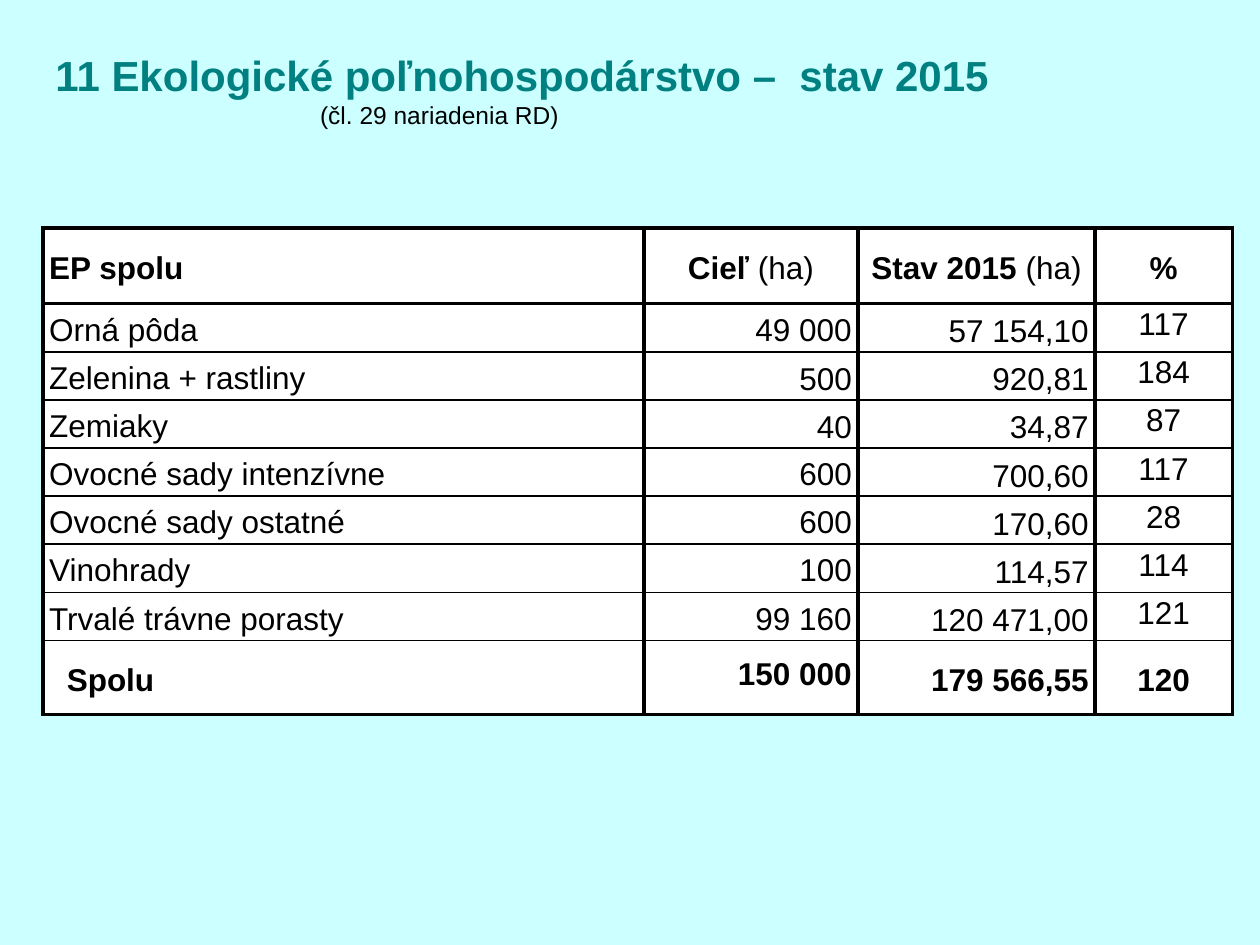
from pptx import Presentation
from pptx.dml.color import RGBColor
from pptx.enum.text import MSO_ANCHOR, PP_ALIGN
from pptx.oxml.ns import qn
from pptx.util import Inches, Pt
from lxml import etree

LEFT, CENTER, RIGHT = PP_ALIGN.LEFT, PP_ALIGN.CENTER, PP_ALIGN.RIGHT
TOP, MIDDLE, BOTTOM = MSO_ANCHOR.TOP, MSO_ANCHOR.MIDDLE, MSO_ANCHOR.BOTTOM

# Content
TITLE = "11 Ekologické poľnohospodárstvo –  stav 2015"
SUBTITLE = "(čl. 29 nariadenia RD)"
HEADER = [("EP spolu", ""), ("Cieľ ", "(ha)"), ("Stav 2015 ", "(ha)"), ("%", "")]
AREAS = [
    ("Orná pôda", "49 000", "57 154,10", "117"),
    ("Zelenina + rastliny", "500", "920,81", "184"),
    ("Zemiaky", "40", "34,87", "87"),
    ("Ovocné sady intenzívne", "600", "700,60", "117"),
    ("Ovocné sady ostatné", "600", "170,60", "28"),
    ("Vinohrady", "100", "114,57", "114"),
    ("Trvalé trávne porasty", "99 160", "120 471,00", "121"),
]
TOTAL = ("Spolu", "150 000", "179 566,55", "120")

# Look
FONT = "Arial"
COLORS = {"page": "CCFFFF", "title": "008080", "text": "000000", "cell": "FFFFFF"}
COLUMN_WIDTHS = [4.77, 1.7, 1.88, 1.09]
COLUMN_ALIGNS = [LEFT, RIGHT, RIGHT, CENTER]
HEADER_HEIGHT, AREA_HEIGHT, TOTAL_HEIGHT = 0.6, 0.31, 0.59
THICK, THIN = 2.25, 1
LOOSE, TIGHT = 1.15, 0.75
TIGHT_GOAL_ROWS = (2, 3, 8)


def color(name):
    return RGBColor.from_string(COLORS[name])


def style_font(font, size, bold, color_name="text"):
    font.name = FONT
    font.size = Pt(size)
    font.bold = bold
    font.color.rgb = color(color_name)


def set_borders(cell, top, bottom):
    properties = cell._tc.get_or_add_tcPr()
    widths = {"a:lnL": THICK, "a:lnR": THICK, "a:lnT": top, "a:lnB": bottom}
    for index, (tag, width) in enumerate(widths.items()):
        line = etree.Element(qn(tag), w=str(Pt(width)))
        fill = etree.SubElement(line, qn("a:solidFill"))
        etree.SubElement(fill, qn("a:srgbClr"), val=COLORS["text"])
        properties.insert(index, line)


deck = Presentation()
deck.slide_width, deck.slide_height = Inches(10), Inches(7.5)
page = deck.slides.add_slide(deck.slide_layouts[5])
page.background.fill.solid()
page.background.fill.fore_color.rgb = color("page")

# Title with its legal reference
title = page.shapes.title
title.left, title.top = Inches(0.34), Inches(0.34)
title.width, title.height = Inches(9.66), Inches(0.74)
frame = title.text_frame
frame.text = f"{TITLE}\n{SUBTITLE}"
frame.vertical_anchor = TOP
frame.word_wrap = True
heading, reference = frame.paragraphs
for para in (heading, reference):
    para.alignment = LEFT
reference._p.get_or_add_pPr().set("marL", str(Inches(2.1)))
style_font(heading.runs[0].font, 24, True, "title")
style_font(reference.runs[0].font, 14, False)

# Table grid
rows = [HEADER, *AREAS, TOTAL]
last = len(rows) - 1
heights = [HEADER_HEIGHT] + [AREA_HEIGHT] * len(AREAS) + [TOTAL_HEIGHT]
table = page.shapes.add_table(
    len(rows), len(COLUMN_WIDTHS), Inches(0.34), Inches(1.81),
    Inches(sum(COLUMN_WIDTHS)), Inches(sum(heights))).table
table.horz_banding = False
for column, width in zip(table.columns, COLUMN_WIDTHS):
    column.width = Inches(width)
for row, height in zip(table.rows, heights):
    row.height = Inches(height)

# Table cells
for r, values in enumerate(rows):
    is_area = 0 < r < last
    for c, value in enumerate(values):
        cell = table.cell(r, c)
        cell.fill.solid()
        cell.fill.fore_color.rgb = color("cell")
        side, edge = (0, 0) if c == 3 else (0.05, 0.03)
        cell.margin_left = cell.margin_right = Inches(side)
        cell.margin_top = cell.margin_bottom = Inches(edge)
        cell.vertical_anchor = BOTTOM if is_area and c in (1, 2) else MIDDLE
        set_borders(cell, THICK if r < 2 else THIN, THICK if r in (0, last) else THIN)

        para = cell.text_frame.paragraphs[0]
        name, unit = value if r == 0 else (value, "")
        para.text = name
        style_font(para.runs[0].font, 18, not is_area)
        if unit:
            span = para.add_run()
            span.text = unit
            style_font(span.font, 18, False)
        para.alignment = CENTER if r == 0 and c > 0 else COLUMN_ALIGNS[c]
        tight = (is_area and c > 1) or (c == 1 and r in TIGHT_GOAL_ROWS)
        para.line_spacing = TIGHT if tight else LOOSE
        if r == last and c == 0:
            para._p.get_or_add_pPr().set("marL", str(Inches(0.14)))

deck.save("out.pptx")
